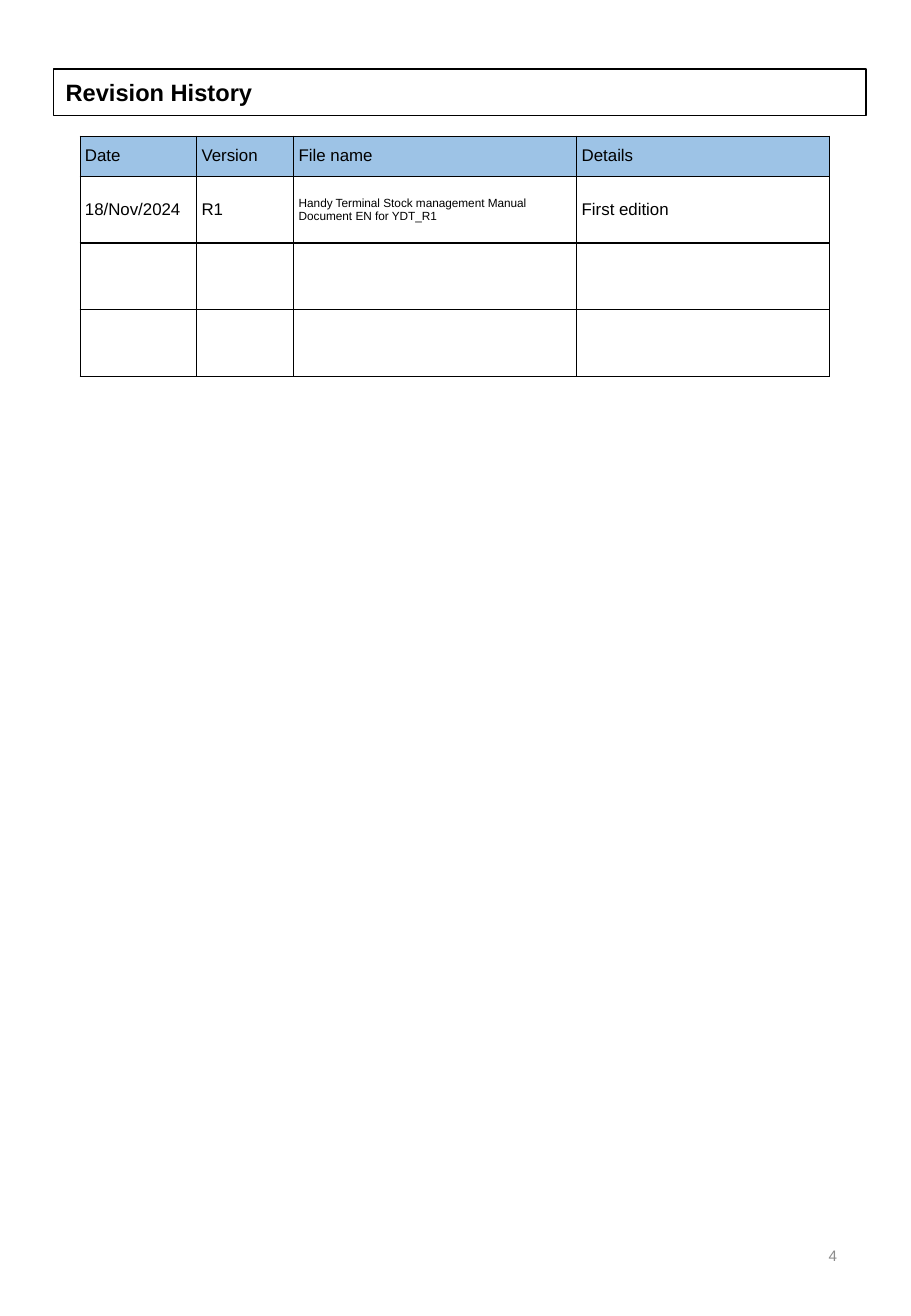
from lxml import etree
from pptx import Presentation
from pptx.dml.color import RGBColor
from pptx.enum.text import MSO_ANCHOR as Anchor, PP_ALIGN as Align
from pptx.oxml import parse_xml
from pptx.oxml.ns import nsdecls
from pptx.util import Inches, Pt

FONT = "Arial"
COLORS = {"text": "000000", "line": "000000", "header": "9DC3E6",
          "page": "8C8C8C"}
COLUMN_WIDTHS = [0.96, 0.8, 2.33, 2.08]
ROW_HEIGHTS = [0.33, 0.55, 0.55, 0.55]
REVISIONS = [
    ["Date", "Version", "File name", "Details"],
    ["18/Nov/2024", "R1",
     "Handy Terminal Stock management Manual Document EN for YDT_R1",
     "First edition"],
]
FILE_NAME_COLUMN = 2


def color(name):
    return RGBColor.from_string(COLORS[name])


def write(tf, text, size, fill="text", bold=False, align=Align.LEFT):
    tf.word_wrap = True
    p = tf.paragraphs[0]
    p.alignment = align
    r = p.add_run()
    r.text = text
    r.font.name, r.font.size, r.font.bold = FONT, Pt(size), bold
    r.font.color.rgb = color(fill)


def add_title(s, text):
    title = s.shapes.title
    title.left, title.top = Inches(0.44), Inches(0.57)
    title.width, title.height = Inches(6.69), Inches(0.38)
    title.line.color.rgb = color("line")
    title.line.width = Pt(1)
    title.text_frame.vertical_anchor = Anchor.MIDDLE
    write(title.text_frame, text, 14, bold=True)


def set_borders(cell):
    """Draw all four cell edges; call before filling the cell."""
    tc_pr = cell._tc.get_or_add_tcPr()
    for side in ("lnL", "lnR", "lnT", "lnB"):
        ln = parse_xml(f'<a:{side} {nsdecls("a")} w="{Pt(0.75)}"/>')
        fill = etree.SubElement(ln, ln.tag.replace(side, "solidFill"))
        etree.SubElement(fill, ln.tag.replace(side, "srgbClr"),
                         val=COLORS["line"])
        tc_pr.append(ln)


def format_cell(cell, is_header):
    set_borders(cell)
    cell.vertical_anchor = Anchor.MIDDLE
    cell.margin_left, cell.margin_right = Inches(0.04), Inches(0.1)
    cell.margin_top = cell.margin_bottom = Inches(0.05)
    if is_header:
        cell.fill.solid()
        cell.fill.fore_color.rgb = color("header")
    else:
        cell.fill.background()


def add_revision_table(s):
    frame = s.shapes.add_table(
        len(ROW_HEIGHTS), len(COLUMN_WIDTHS), Inches(0.66), Inches(1.12),
        Inches(sum(COLUMN_WIDTHS)), Inches(sum(ROW_HEIGHTS)))
    table = frame.table
    table.horz_banding = False
    for column, width in zip(table.columns, COLUMN_WIDTHS):
        column.width = Inches(width)
    for i, (row, height) in enumerate(zip(table.rows, ROW_HEIGHTS)):
        row.height = Inches(height)
        for cell in row.cells:
            format_cell(cell, is_header=i == 0)
    for i, texts in enumerate(REVISIONS):
        for j, text in enumerate(texts):
            size = 7 if i > 0 and j == FILE_NAME_COLUMN else 10
            write(table.cell(i, j).text_frame, text, size)


def add_page_number(s, number):
    box = s.shapes.add_textbox(Inches(5.3), Inches(10.04),
                               Inches(1.69), Inches(0.58))
    box.text_frame.vertical_anchor = Anchor.MIDDLE
    write(box.text_frame, str(number), 9, fill="page", align=Align.RIGHT)


def main():
    prs = Presentation()
    prs.slide_width, prs.slide_height = Inches(7.5), Inches(10.83)
    s = prs.slides.add_slide(prs.slide_layouts[5])
    add_title(s, "Revision History")
    add_revision_table(s)
    add_page_number(s, 4)
    prs.save("out.pptx")


if __name__ == "__main__":
    main()
